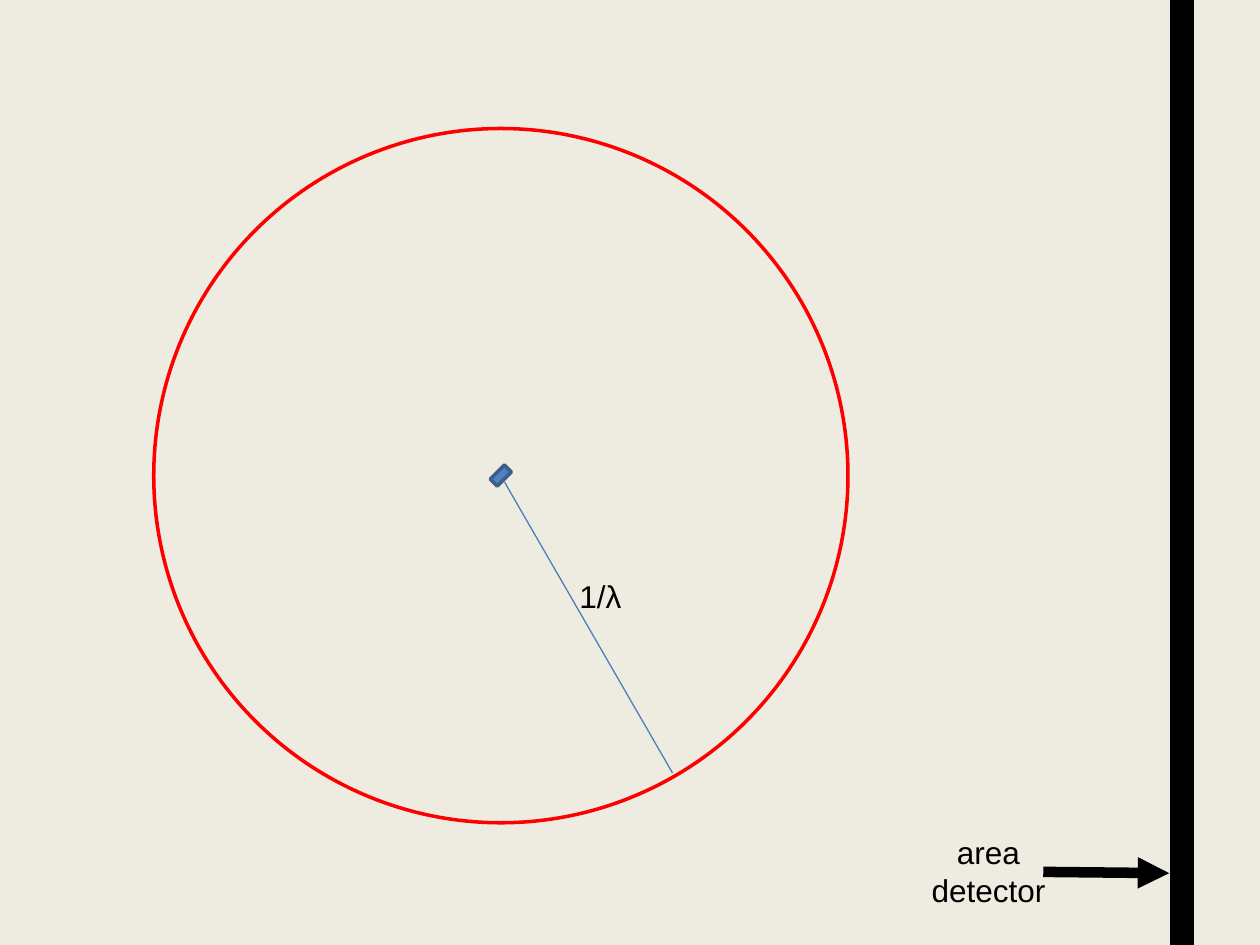
import math
from pptx import Presentation
from pptx import util as u
from pptx.dml.color import RGBColor
from pptx.enum import shapes, text
from pptx.oxml.ns import qn
from lxml import etree

WIDTH, HEIGHT = 10, 7.5
FONT = "Arial"
COLORS = {
    "paper": "EEECE1",
    "ewald": "FF0000",
    "ink": "000000",
    "crystal": "4F81BD",
    "crystal_edge": "3A5F8C",
    "radius": "4B7EBC",
}


def rgb(name):
    return RGBColor.from_string(COLORS[name])


def inches(*lengths):
    return [u.Inches(length) for length in lengths]


def add_centered(slide, kind, center, size, fill, edge, rotation=0):
    (x, y), (width, height) = center, size
    figure = slide.shapes.add_shape(
        kind, *inches(x - width / 2, y - height / 2, width, height))
    figure.shadow.inherit = False
    figure.fill.solid()
    figure.fill.fore_color.rgb = rgb(fill)
    figure.line.color.rgb = rgb(edge)
    figure.line.width = u.Pt(2)
    figure.rotation = rotation


def add_line(slide, start, end, color, weight, arrow=False):
    line = slide.shapes.add_connector(
        shapes.MSO_CONNECTOR.STRAIGHT, *inches(*start, *end))
    line.line.color.rgb = rgb(color)
    line.line.width = u.Pt(weight)
    if arrow:
        etree.SubElement(line.line._get_or_add_ln(), qn("a:tailEnd"), type="triangle")
    etree.SubElement(line._element.spPr, qn("a:effectLst"))


def add_label(slide, wording, left, top, width, height, align=None):
    label = slide.shapes.add_textbox(*inches(left, top, width, height))
    frame = label.text_frame
    frame.text = wording
    frame.word_wrap = False
    frame.auto_size = text.MSO_AUTO_SIZE.SHAPE_TO_FIT_TEXT
    for paragraph in frame.paragraphs:
        paragraph.alignment = align
        for run in paragraph.runs:
            run.font.name = FONT
            run.font.size = u.Pt(18)
            run.font.color.rgb = rgb("ink")


def main():
    deck = Presentation()
    deck.slide_width, deck.slide_height = inches(WIDTH, HEIGHT)
    slide = deck.slides.add_slide(deck.slide_layouts[6])
    slide.background.fill.solid()
    slide.background.fill.fore_color.rgb = rgb("paper")

    origin = (3.975, 3.775)
    diameter = 5.51
    rectangle = shapes.MSO_SHAPE.RECTANGLE
    add_centered(slide, shapes.MSO_SHAPE.OVAL, origin, (diameter, diameter), "paper", "ewald")
    add_centered(slide, rectangle, (9.38, HEIGHT / 2), (0.16, HEIGHT), "ink", "ink")
    add_centered(slide, rectangle, origin, (0.08, 0.16), "crystal", "crystal_edge", rotation=45)

    angle = math.radians(60)
    crystal_side, circle_side = [
        (origin[0] + reach * math.cos(angle), origin[1] + reach * math.sin(angle))
        for reach in (0.06, diameter / 2 - 0.03)]
    add_line(slide, crystal_side, circle_side, "radius", 0.75)
    add_label(slide, "1/λ", 4.5, 4.53, 0.67, 0.51)

    add_label(slide, "area\ndetector", 7.29, 6.56, 1.11, 0.71, text.PP_ALIGN.CENTER)
    add_line(slide, (8.28, 6.92), (9.28, 6.93), "ink", 6, arrow=True)
    deck.save("out.pptx")


if __name__ == "__main__":
    main()
